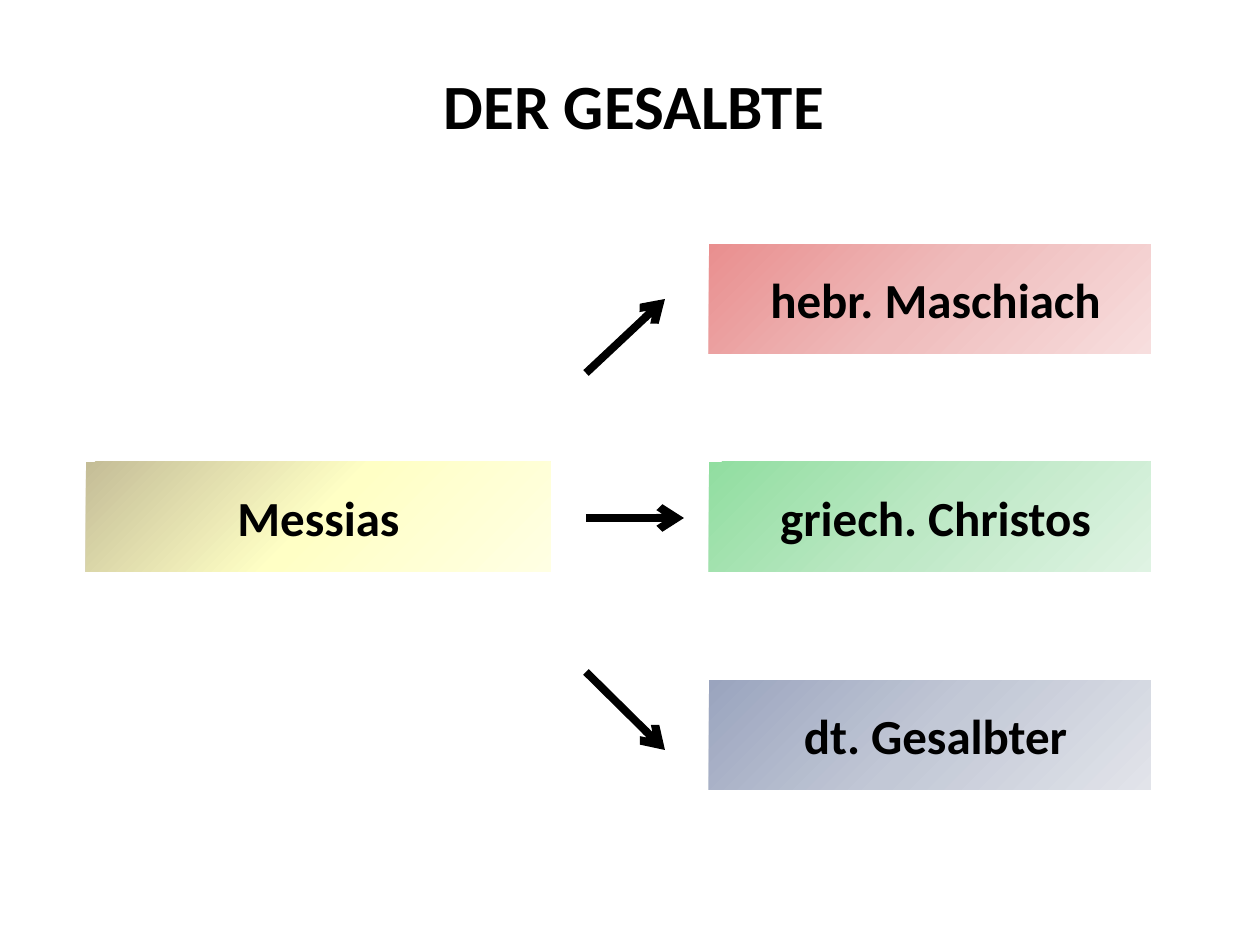
from copy import deepcopy

from lxml.etree import SubElement
from pptx import Presentation
from pptx.dml.color import RGBColor
from pptx.enum.shapes import MSO_CONNECTOR, MSO_SHAPE
from pptx.enum.text import MSO_ANCHOR, MSO_AUTO_SIZE, PP_ALIGN
from pptx.oxml.ns import qn
from pptx.util import Emu, Pt

COLORS = {
    "text": "000000",
    "title_fill": "FFFFFF",
    "messias": ("C4BD97", "FFFFC5", "FFFFE3"),
    "hebrew": ("E98F8F", "EFBCBC", "F7DEDE"),
    "greek": ("91DEA0", "BDE8C5", "DFF3E3"),
    "german": ("9AA4BE", "C2C8D6", "E2E4EA"),
}


def px(value):
    return Emu(round(value * 914400 / 126))


def write_text(shape, text, size, **frame_format):
    frame = shape.text_frame
    for name, value in frame_format.items():
        setattr(frame, name, value)
    paragraph = frame.paragraphs[0]
    paragraph.alignment = PP_ALIGN.CENTER
    run = paragraph.add_run()
    run.text = text
    for name, value in {"name": "Calibri", "size": Pt(size), "bold": True}.items():
        setattr(run.font, name, value)
    run.font.color.rgb = RGBColor.from_string(COLORS["text"])


prs = Presentation()
prs.slide_width, prs.slide_height = px(1260), px(945)
slide = prs.slides.add_slide(prs.slide_layouts[5])

# Title
title = slide.shapes.title
title.left, title.top, title.width, title.height = map(px, (54, 55, 1160, 79))
title.fill.solid()
title.fill.fore_color.rgb = RGBColor.from_string(COLORS["title_fill"])
write_text(title, "DER GESALBTE", 36, vertical_anchor=MSO_ANCHOR.TOP,
           auto_size=MSO_AUTO_SIZE.NONE, margin_top=px(11), margin_bottom=0)

# Term and its three translations
row_top, row_step, box_height = 244, 218, 110
terms = [
    ("Messias", "messias", 86, 1, 465),
    (" hebr. Maschiach", "hebrew", 709, 0, 442),
    (" griech. Christos", "greek", 709, 1, 442),
    (" dt. Gesalbter", "german", 709, 2, 442),
]
for text, color, left, row, width in terms:
    term = slide.shapes.add_shape(
        MSO_SHAPE.RECTANGLE, px(left), px(row_top + row * row_step), px(width), px(box_height))
    term.shadow.inherit = False
    term.line.fill.background()

    # Three-stop diagonal gradient
    term.fill.gradient()
    term.fill.gradient_angle = 315
    stop_list = term._element.spPr.find(".//" + qn("a:gsLst"))
    stop_list.insert(1, deepcopy(stop_list[0]))
    for index, stop in enumerate(term.fill.gradient_stops):
        stop.position = index / 2
        stop.color.rgb = RGBColor.from_string(COLORS[color][index])

    write_text(term, text, 28, word_wrap=True, vertical_anchor=MSO_ANCHOR.MIDDLE,
               margin_top=px(25), margin_bottom=px(25))

# Arrows from the term to its translations
arrow_left = 586
for start_y, end_x, end_y in [(518, 684, 518), (373, 665, 299), (672, 665, 750)]:
    arrow = slide.shapes.add_connector(
        MSO_CONNECTOR.STRAIGHT, px(arrow_left), px(start_y), px(end_x), px(end_y))
    arrow.line.width = Pt(4.5)
    arrow.line.color.rgb = RGBColor.from_string(COLORS["text"])
    SubElement(arrow.line._get_or_add_ln(), qn("a:tailEnd"), type="arrow")
    SubElement(arrow._element.spPr, qn("a:effectLst"))

prs.save("out.pptx")
